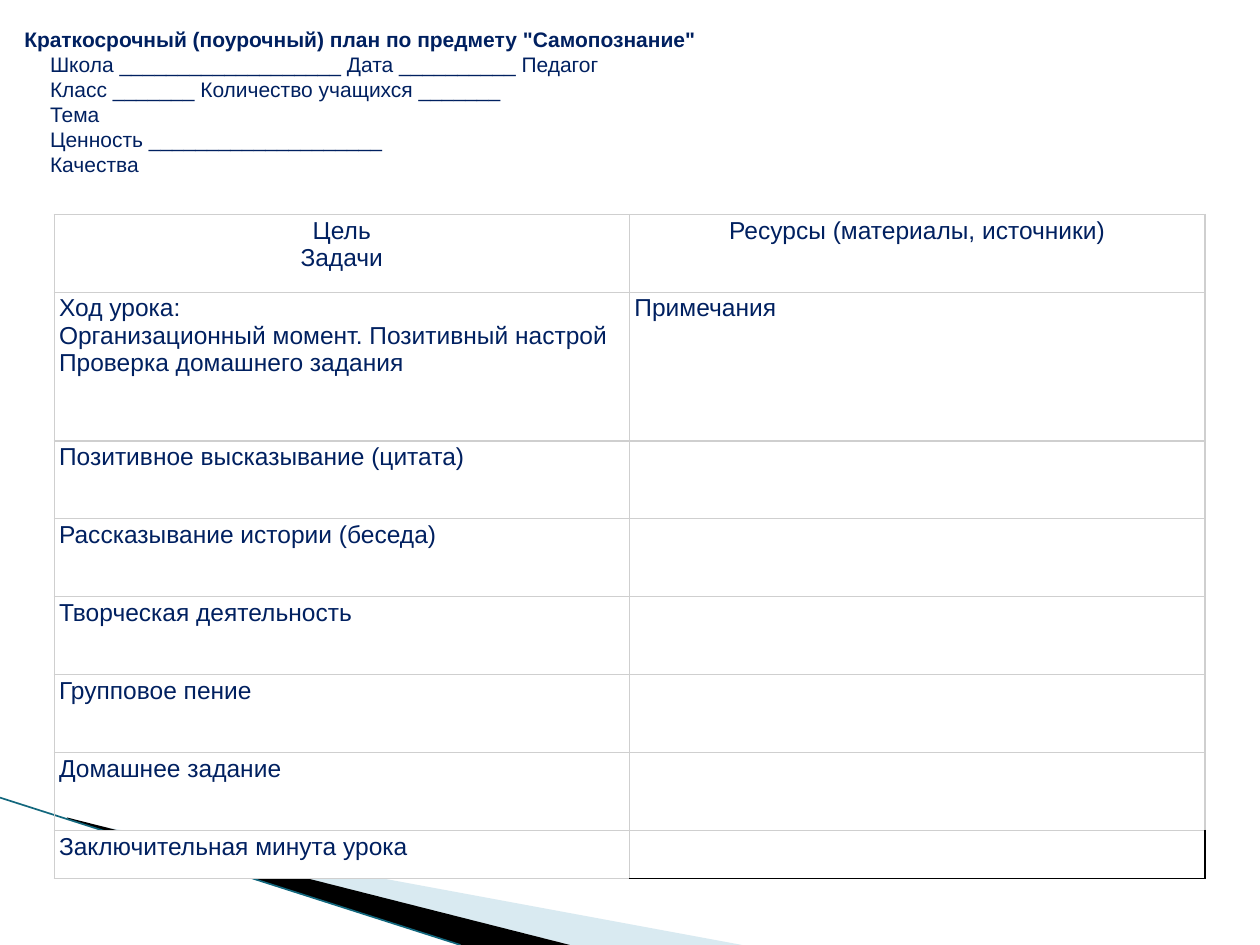
from lxml import etree
from pptx import Presentation
from pptx.dml.color import RGBColor
from pptx.enum.shapes import MSO_CONNECTOR
from pptx.enum.text import MSO_ANCHOR, PP_ALIGN
from pptx.oxml.ns import qn
from pptx.util import Cm, Pt

COLORS = {"navy": "002060", "grid": "CFCFCF", "black": "000000",
          "white": "FFFFFF", "pale": "A0CBDC", "teal": "12677D"}

HEADING = 'Краткосрочный (поурочный) план по предмету "Самопознание"'
FORM_LINES = [
    "Школа ___________________ Дата __________ Педагог",
    "Класс _______ Количество учащихся _______",
    "Тема",
    "Ценность ____________________",
    "Качества",
]
# Height in cm, left cell, right cell; \v is a line break
PLAN_ROWS = [
    (1.57, "Цель\vЗадачи", "Ресурсы (материалы, источники)"),
    (3, "Ход урока:\vОрганизационный момент. Позитивный настрой\v"
        "Проверка домашнего задания", "Примечания"),
    (1.57, "Позитивное высказывание (цитата)", ""),
    (1.57, "Рассказывание истории (беседа)", ""),
    (1.57, "Творческая деятельность", ""),
    (1.57, "Групповое пение", ""),
    (1.57, "Домашнее задание", ""),
    (0.97, "Заключительная минута урока", ""),
]


def rgb(name):
    return RGBColor.from_string(COLORS[name])


def set_all(target, values):
    for key, value in values.items():
        setattr(target, key, value)


def style_font(font, size, bold=False):
    set_all(font, {"name": "Arial", "size": Pt(size), "bold": bold})
    font.color.rgb = rgb("navy")


def add_ribbon(slide, left, top):
    """Draw the corner ribbon: two wedges and the thin line along them."""
    wedges = [
        ("pale", 40, [(1.4, 0.46), (14.96, 2.97), (11.49, 2.97), (1.4, 0.43)]),
        ("black", 100, [(1.35, 0.4), (11.49, 2.97), (9.3, 2.97), (1.37, 0.43)]),
    ]
    for color, opacity, points in wedges:
        corners = [(Cm(left + x), Cm(top + y)) for x, y in points]
        builder = slide.shapes.build_freeform(*corners[0])
        builder.add_line_segments(corners[1:], close=True)
        wedge = builder.convert_to_shape()
        wedge.shadow.inherit = False
        wedge.fill.solid()
        wedge.fill.fore_color.rgb = rgb(color)
        wedge.line.fill.background()
        if opacity < 100:
            srgb = wedge.fill._xPr.find(".//" + qn("a:srgbClr"))
            etree.SubElement(srgb, qn("a:alpha"), val=str(opacity * 1000))

    edge = slide.shapes.add_connector(
        MSO_CONNECTOR.STRAIGHT, Cm(left), Cm(top), Cm(left + 9.28), Cm(top + 2.97))
    edge.line.color.rgb = rgb("teal")
    edge.line.width = Pt(0.95)
    etree.SubElement(edge._element.spPr, qn("a:effectLst"))


def set_borders(cell, colors):
    """Take border colours in the order left, right, top, bottom."""
    props = cell._tc.get_or_add_tcPr()
    for side, color in zip("LRTB", colors):
        border = etree.SubElement(props, qn(f"a:ln{side}"), w=str(Pt(0.75)))
        fill = etree.SubElement(border, qn("a:solidFill"))
        etree.SubElement(fill, qn("a:srgbClr"), val=COLORS[color])


def add_plan_table(slide, left, top, width):
    heights = [row[0] for row in PLAN_ROWS]
    table = slide.shapes.add_table(
        len(PLAN_ROWS), 2, Cm(left), Cm(top), Cm(width), Cm(sum(heights))).table
    set_all(table, {"first_row": False, "horz_banding": False})
    for column in table.columns:
        column.width = Cm(width / 2)

    last = len(PLAN_ROWS) - 1
    for r, (height, *texts) in enumerate(PLAN_ROWS):
        table.rows[r].height = Cm(height)
        for c, text in enumerate(texts):
            cell = table.cell(r, c)
            set_all(cell, {"margin_left": Cm(0.1), "margin_right": Cm(0.1),
                           "margin_top": Cm(0.05), "margin_bottom": Cm(0.05)})
            dark_corner = (r, c) == (last, 1)
            outer = "black" if dark_corner else "grid"
            set_borders(cell, ["grid", outer, "grid", outer])
            if (r, c) == (last, 0):
                cell.fill.solid()
                cell.fill.fore_color.rgb = rgb("white")
            else:
                cell.fill.background()
            if text:
                cell.text_frame.text = text
            paragraph = cell.text_frame.paragraphs[0]
            paragraph.alignment = PP_ALIGN.CENTER if r == 0 else PP_ALIGN.LEFT
            style_font(paragraph.font, 14)
            for run in paragraph.runs:
                style_font(run.font, 14)


def add_form_header(slide, left, top, width, height):
    frame = slide.shapes.add_textbox(
        Cm(left), Cm(top), Cm(width), Cm(height)).text_frame
    set_all(frame, {"word_wrap": True, "vertical_anchor": MSO_ANCHOR.TOP,
                    "margin_left": 0, "margin_right": 0,
                    "margin_top": 0, "margin_bottom": 0})
    for i, text in enumerate([HEADING, *FORM_LINES]):
        paragraph = frame.paragraphs[0] if i == 0 else frame.add_paragraph()
        indent = 0.19 if i == 0 else 0.71
        paragraph._p.get_or_add_pPr().set("marL", str(Cm(indent)))
        paragraph.line_spacing = Pt(14.3)
        run = paragraph.add_run()
        run.text = text
        style_font(run.font, 12, bold=i == 0)


def main():
    prs = Presentation()
    set_all(prs, {"slide_width": Cm(25.4), "slide_height": Cm(19.05)})
    slide = prs.slides.add_slide(prs.slide_layouts[6])
    add_ribbon(slide, 0, 16.08)
    add_plan_table(slide, 1.09, 4.32, 23.2)
    add_form_header(slide, 0.3, 0.54, 25.1, 3.58)
    prs.save("out.pptx")


if __name__ == "__main__":
    main()
